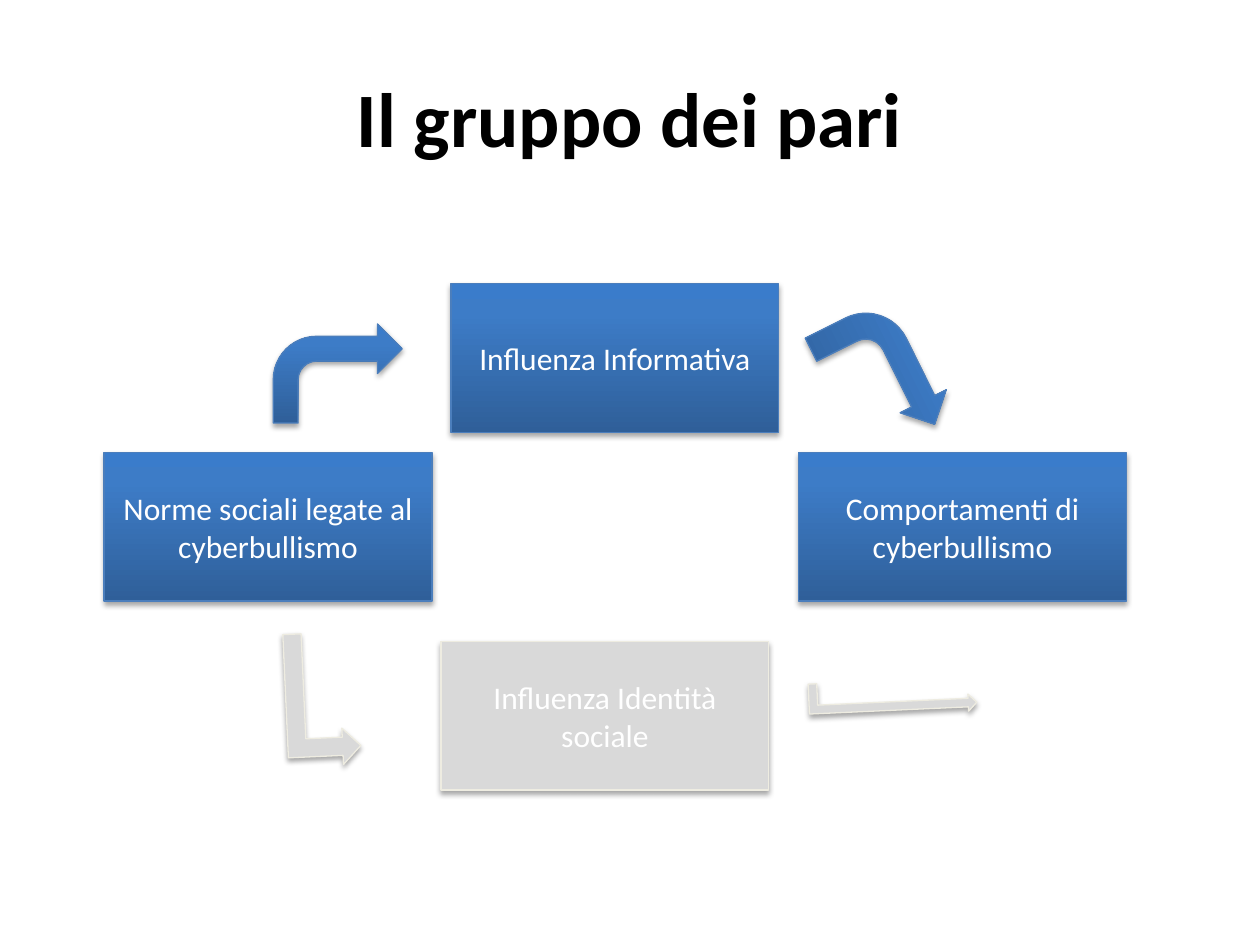
from copy import deepcopy

from lxml import etree
from pptx import Presentation
from pptx.dml.color import RGBColor
from pptx.enum import shapes, text
from pptx.oxml import ns
from pptx.util import Cm, Pt

# Colours
WHITE = RGBColor(0xFF, 0xFF, 0xFF)
BLACK = RGBColor(0, 0, 0)
BLUE_LINE = RGBColor(0x4B, 0x7E, 0xBC)
GREY = RGBColor(0xD9, 0xD9, 0xD9)
GREY_LINE = RGBColor(0xEE, 0xEC, 0xE1)
BLUE_STOPS = [
    (0, RGBColor(0x2F, 0x5F, 0x99)),
    (0.8, RGBColor(0x3D, 0x7C, 0xC7)),
    (1, RGBColor(0x3A, 0x7C, 0xCB)),
]

# Content (lengths in cm)
TITLE = "Il gruppo dei pari"
BOX_SIZE = (6.61, 3.0)
BOXES = [  # wording, left, top, active
    ("Norme sociali legate al cyberbullismo", 2.1, 9.12, True),
    ("Comportamenti di cyberbullismo", 16.1, 9.12, True),
    ("Influenza Identità sociale", 8.89, 12.93, False),
    ("Influenza Informativa", 9.09, 5.72, True),
]
BENT = shapes.MSO_SHAPE.BENT_ARROW
BENT_UP = shapes.MSO_SHAPE.BENT_UP_ARROW
ARROWS = [  # preset, left, top, width, height, rotation, active
    (BENT, 5.51, 6.53, 2.6, 2.0, 0, True),
    (BENT, 16.41, 6.53, 2.72, 2.08, 63.5, True),
    (BENT_UP, 5.16, 13.36, 2.67, 1.47, 87.4, False),
    (BENT_UP, 17.65, 12.37, 0.69, 3.38, 87.4, False),
]


def add_shadow(shape):
    shape.shadow.inherit = False
    effects = shape._element.spPr.find(ns.qn("a:effectLst"))
    shadow = etree.SubElement(
        effects, ns.qn("a:outerShdw"), blurRad=str(Pt(3.1)),
        dist=str(Pt(1.8)), dir="5400000", rotWithShape="0")
    colour = etree.SubElement(shadow, ns.qn("a:srgbClr"), val=str(BLACK))
    etree.SubElement(colour, ns.qn("a:alpha"), val="35000")


def fill_blue(fill):
    fill.gradient()
    fill.gradient_angle = 90
    first = fill._xPr.find(".//" + ns.qn("a:gs"))
    first.addnext(deepcopy(first))
    for stop, (position, colour) in zip(fill.gradient_stops, BLUE_STOPS):
        stop.position = position
        stop.color.rgb = colour


def add_part(slide, preset, left, top, width, height, active):
    part = slide.shapes.add_shape(preset, Cm(left), Cm(top), Cm(width), Cm(height))
    if active:
        fill_blue(part.fill)
    else:
        part.fill.solid()
        part.fill.fore_color.rgb = GREY
    part.line.color.rgb = BLUE_LINE if active else GREY_LINE
    part.line.width = Pt(0.75)
    add_shadow(part)
    return part


def write(frame, wording, size, colour, bold=False):
    frame.word_wrap = True
    frame.vertical_anchor = text.MSO_ANCHOR.MIDDLE
    frame.text = wording
    paragraph = frame.paragraphs[0]
    paragraph.alignment = text.PP_ALIGN.CENTER
    font = paragraph.font
    font.name, font.size, font.bold = "Calibri", Pt(size), bold
    font.color.rgb = colour


def main():
    prs = Presentation()
    prs.slide_width, prs.slide_height = Cm(25.4), Cm(19.05)
    slide = prs.slides.add_slide(prs.slide_layouts[5])

    # Title
    title = slide.shapes.title
    title.left, title.top = Cm(1.27), Cm(0.76)
    title.width, title.height = Cm(22.86), Cm(3.18)
    write(title.text_frame, TITLE, 44, BLACK, bold=True)

    # Boxes of the cycle
    for wording, left, top, active in BOXES:
        box = add_part(slide, shapes.MSO_SHAPE.RECTANGLE, left, top, *BOX_SIZE, active)
        write(box.text_frame, wording, 18, WHITE)

    # Bent arrows between them
    for preset, left, top, width, height, rotation, active in ARROWS:
        arrow = add_part(slide, preset, left, top, width, height, active)
        arrow.rotation = rotation

    prs.save("out.pptx")


if __name__ == "__main__":
    main()
